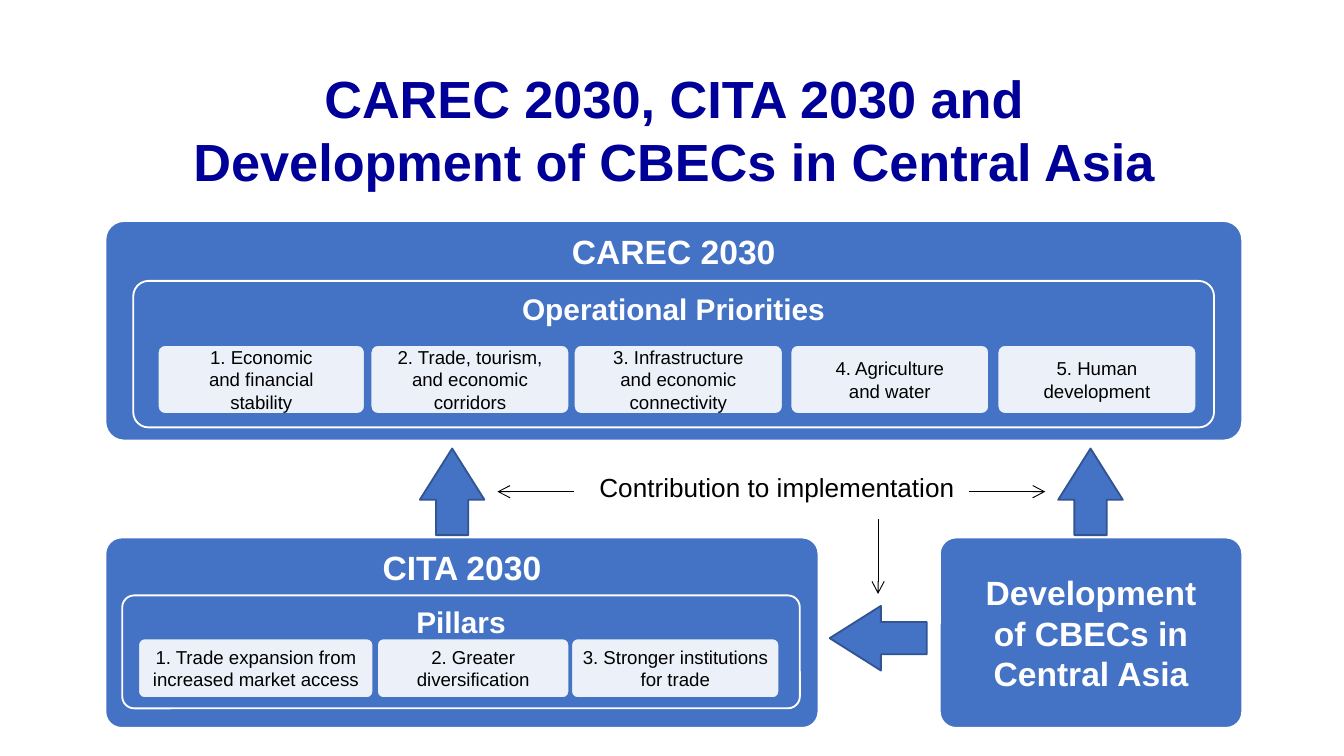
from dataclasses import dataclass

from lxml.etree import SubElement
from pptx import Presentation
from pptx.dml.color import RGBColor
from pptx.enum.shapes import MSO_CONNECTOR, MSO_SHAPE
from pptx.enum.text import MSO_ANCHOR, PP_ALIGN
from pptx.oxml.ns import qn
from pptx.util import Pt


@dataclass(frozen=True)
class Theme:
    font: str = "Arial"
    title: str = "000099"
    panel: str = "4472C4"
    arrow_edge: str = "325491"
    light: str = "FFFFFF"
    dark: str = "000000"
    card_opacity: int = 90
    title_size: int = 28
    heading_size: int = 18
    subheading_size: int = 16
    label_size: int = 14
    card_size: int = 10


def write_text(frame, text, *, font, size, color, bold=False, align=PP_ALIGN.CENTER,
               anchor=MSO_ANCHOR.MIDDLE, margins=(7.2, 3.6), line_spacing=1.0):
    """Fill a text frame, one paragraph per line of text."""
    frame.word_wrap = True
    frame.vertical_anchor = anchor
    frame.margin_left = frame.margin_right = Pt(margins[0])
    frame.margin_top = frame.margin_bottom = Pt(margins[1])
    for index, line in enumerate(text.split("\n")):
        paragraph = frame.add_paragraph() if index else frame.paragraphs[0]
        paragraph.alignment = align
        paragraph.line_spacing = line_spacing
        run = paragraph.add_run()
        run.text = line
        run.font.name = font
        run.font.size = Pt(size)
        run.font.bold = bold
        run.font.color.rgb = RGBColor.from_string(color)


class SlideBuilder:
    def __init__(self, slide, theme):
        self.slide = slide
        self.theme = theme

    def shape(self, kind, box, fill, line, adjustments):
        shape = self.slide.shapes.add_shape(kind, *map(Pt, box))
        shape.shadow.inherit = False
        shape.fill.solid()
        shape.fill.fore_color.rgb = RGBColor.from_string(fill)
        shape.line.color.rgb = RGBColor.from_string(line)
        shape.line.width = Pt(1)
        for index, value in enumerate(adjustments):
            shape.adjustments[index] = value
        return shape

    def text(self, box, text, **style):
        text_box = self.slide.shapes.add_textbox(*map(Pt, box))
        write_text(text_box.text_frame, text, font=self.theme.font, **style)

    def panel(self, box, text, size, corner=0.085, anchor=MSO_ANCHOR.TOP, line_spacing=0.9):
        theme = self.theme
        shape = self.shape(MSO_SHAPE.ROUNDED_RECTANGLE, box, theme.panel, theme.light, [corner])
        write_text(shape.text_frame, text, font=theme.font, size=size, color=theme.light,
                   bold=True, anchor=anchor, margins=(5, 5), line_spacing=line_spacing)

    def card(self, box, text):
        theme = self.theme
        shape = self.shape(MSO_SHAPE.ROUNDED_RECTANGLE, box, theme.light, theme.panel, [0.105])
        color = shape.fill._xPr.find(qn("a:solidFill"))[0]
        SubElement(color, qn("a:alpha"), val=str(theme.card_opacity * 1000))
        write_text(shape.text_frame, text, font=theme.font, size=theme.card_size,
                   color=theme.dark, margins=(3, 3))

    def card_row(self, top, height, cards):
        for left, width, text in cards:
            self.card((left, top, width, height), text)

    def block_arrow(self, box, rotation=0):
        shape = self.shape(MSO_SHAPE.LEFT_ARROW, box, self.theme.panel,
                           self.theme.arrow_edge, [0.5, 0.793])
        shape.rotation = rotation

    def pointer(self, start, end):
        connector = self.slide.shapes.add_connector(
            MSO_CONNECTOR.STRAIGHT, *map(Pt, (*start, *end)))
        connector.line.color.rgb = RGBColor.from_string(self.theme.dark)
        connector.line.width = Pt(0.5)
        SubElement(connector.line._get_or_add_ln(), qn("a:tailEnd"), type="arrow")
        SubElement(connector._element.spPr, qn("a:effectLst"))


def main():
    presentation = Presentation()
    presentation.slide_width, presentation.slide_height = Pt(720), Pt(405)
    theme = Theme()
    builder = SlideBuilder(presentation.slides.add_slide(presentation.slide_layouts[6]), theme)

    # Title
    builder.text((74, 36, 574, 66),
                 "CAREC 2030, CITA 2030 and\nDevelopment of CBECs in Central Asia",
                 size=theme.title_size, color=theme.title, bold=True)

    # CAREC 2030 with its operational priorities
    builder.panel((56.5, 118.4, 609, 117.6), "CAREC 2030", theme.heading_size)
    builder.panel((71.4, 150.5, 579, 78.5), "Operational Priorities",
                  theme.subheading_size, corner=0.105)
    builder.card_row(184.8, 37, [
        (84.5, 111, "1. Economic\nand financial\nstability"),
        (198.5, 106.5, "2. Trade, tourism,\nand economic\ncorridors"),
        (307.4, 112, "3. Infrastructure\nand economic\nconnectivity"),
        (423.4, 106.5, "4. Agriculture\nand water"),
        (534.4, 106.5, "5. Human development"),
    ])

    # CITA 2030 with its pillars
    builder.panel((56.5, 288, 382, 102), "CITA 2030", theme.heading_size)
    builder.panel((65.5, 319, 363, 60.5), "Pillars", theme.subheading_size, corner=0.105)
    builder.card_row(342, 32, [
        (74, 126, "1. Trade expansion from increased market access"),
        (202, 103, "2. Greater diversification"),
        (306, 111.5, "3. Stronger institutions for trade"),
    ])

    # Development of CBECs
    builder.panel((503.5, 288, 162, 102), "Development\nof CBECs in\nCentral Asia",
                  theme.heading_size, anchor=MSO_ANCHOR.MIDDLE, line_spacing=1.0)

    # Block arrows between the panels
    builder.block_arrow((444.5, 324.6, 52, 34.6))
    for left in (219, 561):
        builder.block_arrow((left, 246.2, 46.4, 34.6), rotation=90)

    # Contribution label and its pointers
    builder.text((314, 249, 205, 24.5), "Contribution to implementation",
                 size=theme.label_size, color=theme.dark, align=PP_ALIGN.LEFT,
                 anchor=MSO_ANCHOR.TOP)
    builder.pointer((307.5, 263.4), (266.5, 263.4))
    builder.pointer((519, 263.4), (560, 263.4))
    builder.pointer((470.4, 278), (470.4, 318.2))

    presentation.save("out.pptx")


if __name__ == "__main__":
    main()
